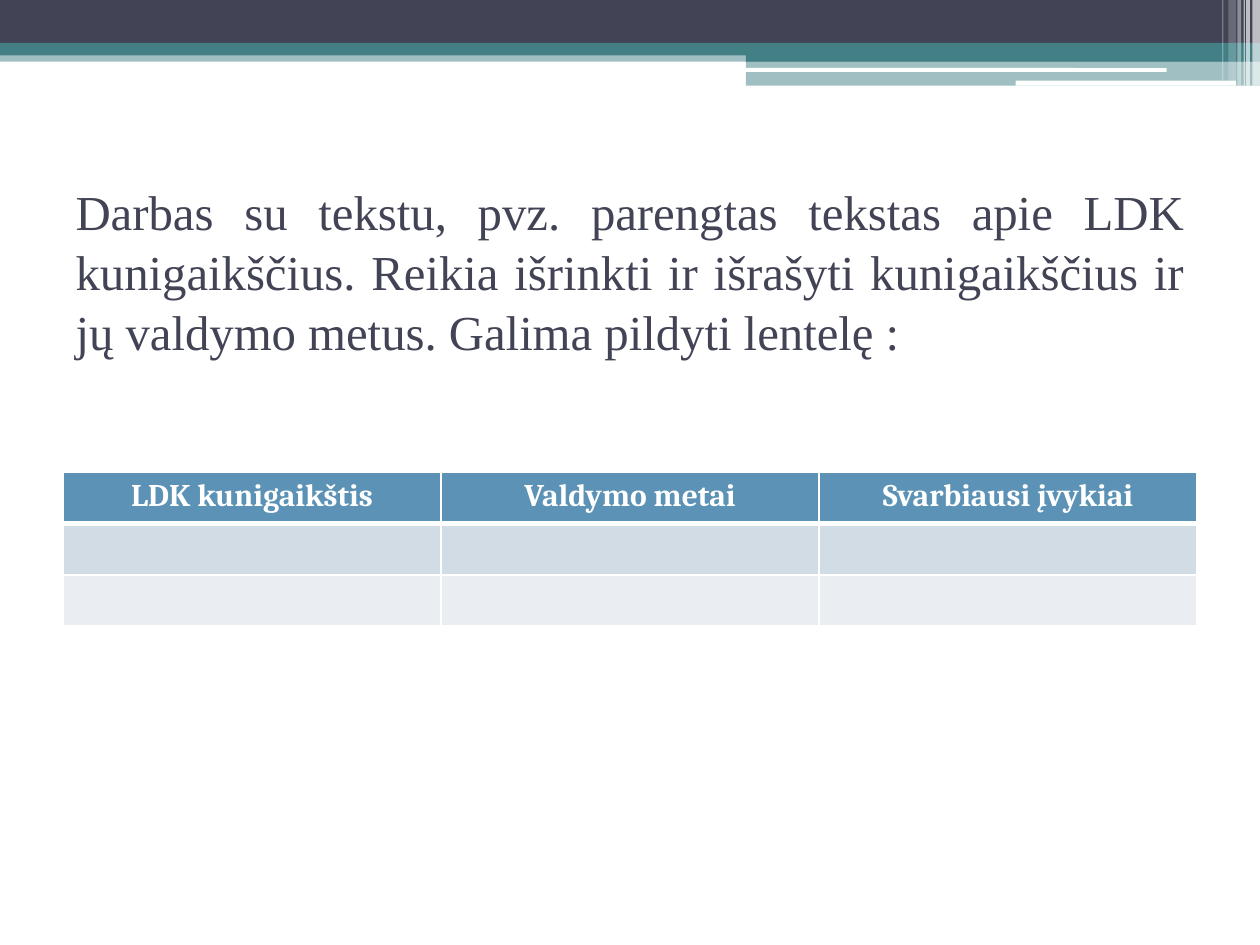
import pptx
import pptx.util
import pptx.dml.color
import pptx.enum.shapes
import pptx.enum.text
import pptx.oxml
import pptx.oxml.ns
from pptx.util import Inches

WHITE = pptx.dml.color.RGBColor(0xFF, 0xFF, 0xFF)
NAVY = pptx.dml.color.RGBColor(0x42, 0x44, 0x56)
TEAL = pptx.dml.color.RGBColor(0x43, 0x80, 0x86)
HEADER_BLUE = pptx.dml.color.RGBColor(0x5C, 0x92, 0xB5)
BAND_DARK = pptx.dml.color.RGBColor(0xD2, 0xDC, 0xE5)
BAND_LIGHT = pptx.dml.color.RGBColor(0xEA, 0xEE, 0xF3)

RECTANGLE = pptx.enum.shapes.MSO_SHAPE.RECTANGLE
ROUNDED = pptx.enum.shapes.MSO_SHAPE.ROUNDED_RECTANGLE

TITLE = (
    "Darbas su tekstu, pvz. parengtas tekstas apie LDK kunigaikščius. "
    "Reikia išrinkti ir išrašyti kunigaikščius ir jų valdymo metus. "
    "Galima pildyti lentelę :"
)
HEADINGS = ["LDK kunigaikštis", "Valdymo metai", "Svarbiausi įvykiai"]
ROW_COLORS = [HEADER_BLUE, BAND_DARK, BAND_LIGHT]


def add_bar(slide, left, top, width, height, color, opacity=100, kind=RECTANGLE):
    shape = slide.shapes.add_shape(
        kind, Inches(left), Inches(top), Inches(width), Inches(height)
    )
    shape.shadow.inherit = False
    shape.fill.solid()
    shape.fill.fore_color.rgb = color
    shape.line.fill.background()
    if opacity < 100:
        color_element = shape.fill._xPr.find(".//" + pptx.oxml.ns.qn("a:srgbClr"))
        alpha = pptx.oxml.parse_xml(
            f'<a:alpha {pptx.oxml.ns.nsdecls("a")} val="{opacity * 1000}"/>'
        )
        color_element.append(alpha)
    return shape


def add_header_band(slide, left, top, width):
    right = left + width
    step = 5.92
    add_bar(slide, left, top + 0.4, width, 0.09, TEAL, 50)
    add_bar(slide, left, top, width, 0.34, NAVY)
    add_bar(slide, left, top + 0.34, width, 0.1, TEAL)
    add_bar(slide, left + step, top + 0.39, width - step, 0.1, TEAL)
    add_bar(slide, left + step, top + 0.48, width - step, 0.2, TEAL, 50)

    for offset, drop, length, height in [(5.91, 0.54, 3.35, 0.03), (8.06, 0.64, 1.75, 0.04)]:
        strip = add_bar(slide, left + offset, top + drop, length, height, WHITE, kind=ROUNDED)
        strip.adjustments[0] = 0.167

    stripes = [
        (0.06, 0.06, 0.68, 65),
        (0.11, 0.03, 0.68, 65),
        (0.13, 0.01, 0.68, 60),
        (0.18, 0.03, 0.68, 40),
        (0.25, 0.06, 0.64, 20),
        (0.3, 0.01, 0.64, 30),
    ]
    for inset, thickness, height, opacity in stripes:
        add_bar(slide, right - inset, top, thickness, height, WHITE, opacity)


def add_title(slide, left, top, width, height):
    title = slide.shapes.title
    title.left, title.top = Inches(left), Inches(top)
    title.width, title.height = Inches(width), Inches(height)
    frame = title.text_frame
    frame.word_wrap = True
    frame.auto_size = pptx.enum.text.MSO_AUTO_SIZE.NONE
    frame.vertical_anchor = pptx.enum.text.MSO_ANCHOR.MIDDLE
    paragraph = frame.paragraphs[0]
    paragraph.alignment = pptx.enum.text.PP_ALIGN.JUSTIFY
    paragraph.line_spacing = 1.03
    run = paragraph.add_run()
    run.text = TITLE
    run.font.name = "Times New Roman"
    run.font.size = pptx.util.Pt(27.9)
    run.font.color.rgb = NAVY


def set_borders(cell, bottom_width):
    properties = cell._tc.get_or_add_tcPr()
    widths = [("lnL", 1), ("lnR", 1), ("lnT", 1), ("lnB", bottom_width)]
    for index, (side, points) in enumerate(widths):
        border = pptx.oxml.parse_xml(
            f'<a:{side} {pptx.oxml.ns.nsdecls("a")} w="{pptx.util.Pt(points)}">'
            f'<a:solidFill><a:srgbClr val="{WHITE}"/></a:solidFill></a:{side}>'
        )
        properties.insert(index, border)


def write_heading(cell, text):
    cell.margin_left = cell.margin_right = Inches(0.07)
    cell.margin_top = cell.margin_bottom = 0
    paragraph = cell.text_frame.paragraphs[0]
    paragraph.alignment = pptx.enum.text.PP_ALIGN.CENTER
    paragraph.line_spacing = 1.15
    run = paragraph.add_run()
    run.text = text
    run.font.name = "Cambria"
    run.font.size = pptx.util.Pt(18)
    run.font.bold = True
    run.font.color.rgb = WHITE


def add_rulers_table(slide, left, top, width, height):
    table = slide.shapes.add_table(
        len(ROW_COLORS), len(HEADINGS),
        Inches(left), Inches(top), Inches(width), Inches(height),
    ).table
    for row_index, color in enumerate(ROW_COLORS):
        for column_index, heading in enumerate(HEADINGS):
            cell = table.cell(row_index, column_index)
            cell.fill.solid()
            cell.fill.fore_color.rgb = color
            set_borders(cell, 3 if row_index == 0 else 1)
            if row_index == 0:
                write_heading(cell, heading)


def main():
    presentation = pptx.Presentation()
    presentation.slide_width = Inches(10)
    presentation.slide_height = Inches(7.5)
    slide = presentation.slides.add_slide(presentation.slide_layouts[5])
    add_header_band(slide, 0, 0, 10)
    add_title(slide, 0.5, 1.25, 9, 1.79)
    add_rulers_table(slide, 0.5, 3.75, 9, 1.22)
    presentation.save("out.pptx")


if __name__ == "__main__":
    main()
